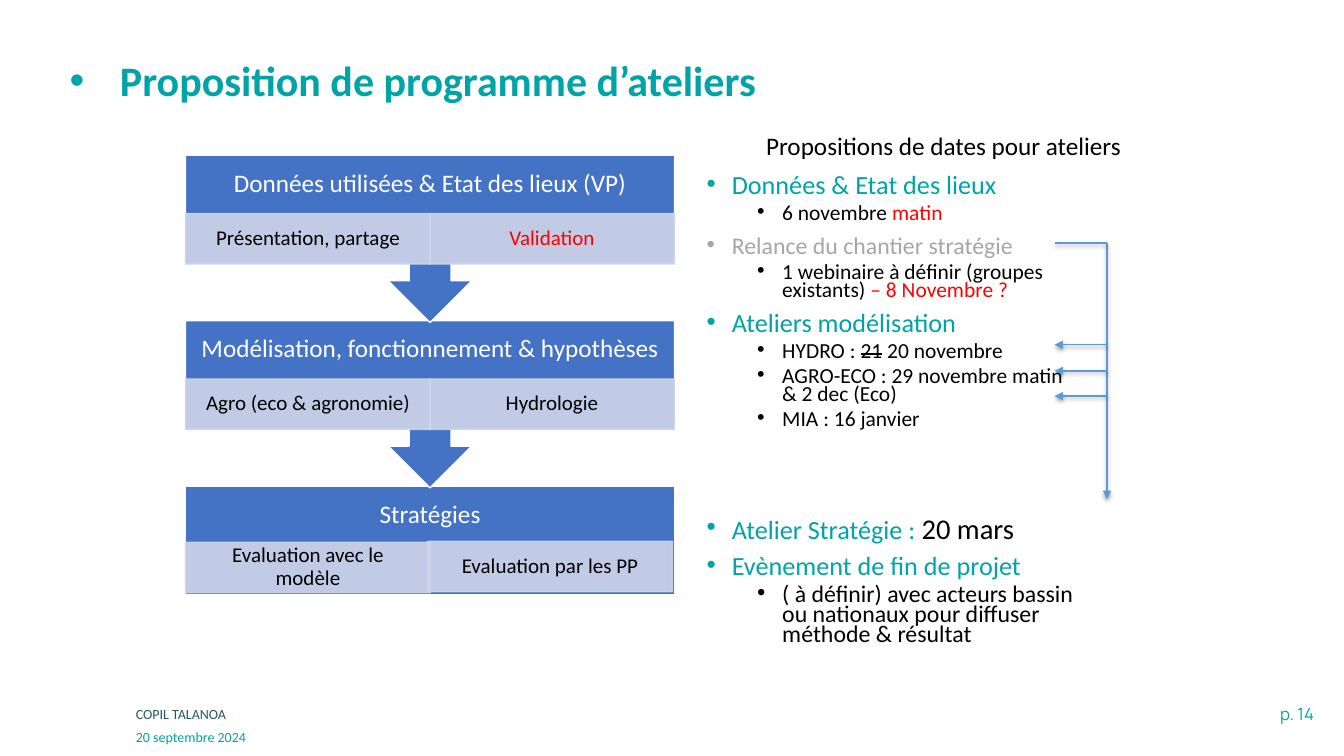
"""Builds the workshop programme slide: three stages and their proposed dates."""
from lxml import etree
from pptx import Presentation
from pptx.dml.color import RGBColor
from pptx.enum.shapes import MSO_CONNECTOR, MSO_SHAPE
from pptx.enum.text import MSO_ANCHOR, PP_ALIGN
from pptx.oxml.ns import qn
from pptx.util import Inches, Pt

LEFT, CENTER, RIGHT = PP_ALIGN.LEFT, PP_ALIGN.CENTER, PP_ALIGN.RIGHT
TOP, MIDDLE = MSO_ANCHOR.TOP, MSO_ANCHOR.MIDDLE
RECT, CALLOUT = MSO_SHAPE.RECTANGLE, MSO_SHAPE.UP_ARROW_CALLOUT
STRAIGHT = MSO_CONNECTOR.STRAIGHT

TEAL, DARK_TEAL, BLACK, RED = "00A3A6", "275662", "000000", "FF0000"
GREY, WHITE, BLUE, PALE, ARROW_BLUE = "A6A6A6", "FFFFFF", "4472C4", "CFD5EA", "5B9BD5"

TITLE = "Proposition de programme d’ateliers"
DATES_HEADING = "Propositions de dates pour ateliers"
STAGES = [
    ("Données utilisées & Etat des lieux (VP)", 1.54,
     [("Présentation, partage", BLACK, 1.84, 2.12), ("Validation", RED, 4.26, 2.12)]),
    ("Modélisation, fonctionnement & hypothèses", 3.18,
     [("Agro (eco & agronomie)", BLACK, 1.84, 3.76), ("Hydrologie", BLACK, 4.26, 3.76)]),
    ("Stratégies", 4.82,
     [("Evaluation avec le modèle", BLACK, 1.84, 5.38),
      ("Evaluation par les PP", BLACK, 4.24, 5.37)]),
]
TOPIC, DETAIL = 0, 1
AGENDA = [
    (TOPIC, 0, [("Données & Etat des lieux", 18.7, TEAL)]),
    (DETAIL, 5, [("6 novembre ", 15.3, BLACK), ("matin", 15.3, RED)]),
    (TOPIC, 10, [("Relance du chantier stratégie", 17, GREY)]),
    (DETAIL, 5, [("1 webinaire à définir (groupes existants) ", 15.3, BLACK),
                 ("– 8 Novembre ?", 15.3, RED)]),
    (TOPIC, 10, [("Ateliers modélisation", 18.7, TEAL)]),
    (DETAIL, 5, [("HYDRO : ", 15.3, BLACK), ("21", 15.3, BLACK, True),
                 (" 20 novembre", 15.3, BLACK)]),
    (DETAIL, 5, [("AGRO-ECO : 29 novembre matin & 2 dec (Eco)", 15.3, BLACK)]),
    (DETAIL, 5, [("MIA : 16 janvier", 15.3, BLACK)]),
    (TOPIC, 64, [("Atelier Stratégie : ", 18.7, TEAL), ("20 mars", 20.4, BLACK)]),
    (TOPIC, 10, [("Evènement de fin de projet", 18.7, TEAL)]),
    (DETAIL, 5, [("( à définir) avec acteurs bassin ou nationaux pour diffuser "
                  "méthode & résultat", 17, BLACK)]),
]
STAGE_LEFT, STAGE_WIDTH, STAGE_HEIGHT, LAST_HEIGHT = 1.84, 4.85, 1.66, 1.08
HEADER_HEIGHT, STEP_WIDTH, STEP_HEIGHT = 0.58, 2.43, 0.5
TRUNK_X, BRANCH_X, TRUNK_TOP, TRUNK_END = 10.98, 10.46, 2.41, 4.95
BRANCH_YS = (3.42, 3.68, 3.93)


def rgb(value):
    return RGBColor.from_string(value)


def child(parent, tag, **attributes):
    element = etree.SubElement(parent, qn(tag))
    for key, value in attributes.items():
        element.set(key, str(value))
    return element


def add_bullet(paragraph, indent, hanging):
    properties = paragraph._p.get_or_add_pPr()
    properties.set("marL", str(Inches(indent)))
    properties.set("indent", str(-Inches(hanging)))
    child(properties, "a:buFont", typeface="Arial")
    child(properties, "a:buChar", char="•")


def add_run(paragraph, text, size=18, color=BLACK, struck=False, bold=False, font="Calibri"):
    run = paragraph.add_run()
    run.text = text
    run.font.size, run.font.bold, run.font.name = Pt(size), bold, font
    run.font.color.rgb = rgb(color)
    if struck:
        run.font._element.set("strike", "sngStrike")


def set_frame(frame, anchor=TOP, insets=(0.1, 0.05, 0.1, 0.05)):
    frame.word_wrap = True
    frame.vertical_anchor = anchor
    (frame.margin_left, frame.margin_top,
     frame.margin_right, frame.margin_bottom) = map(Inches, insets)


def write(frame, text, align=LEFT, spacing=1.0, anchor=TOP,
          insets=(0.1, 0.05, 0.1, 0.05), bullet=None, **run_format):
    set_frame(frame, anchor, insets)
    paragraph = frame.paragraphs[0]
    paragraph.alignment, paragraph.line_spacing = align, spacing
    if bullet:
        add_bullet(paragraph, *bullet)
    add_run(paragraph, text, **run_format)


def add_box(slide, *place):
    return slide.shapes.add_textbox(*map(Inches, place)).text_frame


def add_block(slide, kind, place, fill, line, opacity=100):
    block = slide.shapes.add_shape(kind, *map(Inches, place))
    block.shadow.inherit = False
    block.fill.solid()
    block.fill.fore_color.rgb = rgb(fill)
    block.line.color.rgb = rgb(line)
    block.line.width = Pt(1)
    if opacity < 100:
        for color in block._element.spPr.iter(qn("a:srgbClr")):
            child(color, "a:alpha", val=opacity * 1000)
    return block


def add_stage(slide, heading, top, steps, is_last):
    height = LAST_HEIGHT if is_last else STAGE_HEIGHT
    block = add_block(slide, RECT if is_last else CALLOUT,
                      (STAGE_LEFT, top, STAGE_WIDTH, height), BLUE, WHITE)
    block.rotation = 0 if is_last else 180
    write(add_box(slide, STAGE_LEFT, top, STAGE_WIDTH, HEADER_HEIGHT), heading,
          align=CENTER, spacing=0.9, anchor=MIDDLE, insets=(0.14,) * 4, color=WHITE)
    for label, color, left, step_top in steps:
        step = add_block(slide, RECT, (left, step_top, STEP_WIDTH, STEP_HEIGHT),
                         PALE, PALE, opacity=90)
        write(step.text_frame, label, align=CENTER, spacing=0.9, anchor=MIDDLE,
              insets=(0.12, 0.02, 0.12, 0.02), size=15, color=color)


def add_agenda(slide):
    frame = add_box(slide, 6.91, 1.71, 3.88, 4.77)
    set_frame(frame)
    for index, (level, space, runs) in enumerate(AGENDA):
        paragraph = frame.add_paragraph() if index else frame.paragraphs[0]
        paragraph.level = level
        paragraph.line_spacing, paragraph.space_before = 0.7, Pt(space)
        add_bullet(paragraph, 0.75 if level else 0.25, 0.25)
        for run in runs:
            add_run(paragraph, *run)


def add_link(slide, start, end, arrow=True):
    link = slide.shapes.add_connector(STRAIGHT, *map(Inches, start + end))
    link.line.color.rgb = rgb(ARROW_BLUE)
    link.line.width = Pt(1)
    if arrow:
        child(link.line._get_or_add_ln(), "a:tailEnd", type="triangle")
    effects = child(link._element.spPr, "a:effectLst")
    shadow = child(effects, "a:outerShdw", blurRad=Pt(3.1), dist=Pt(1.6),
                   dir=5400000, rotWithShape=0)
    child(child(shadow, "a:srgbClr", val=BLACK), "a:alpha", val=38000)


def main():
    deck = Presentation()
    deck.slide_width, deck.slide_height = Inches(13.33), Inches(7.5)
    slide = deck.slides.add_slide(deck.slide_layouts[6])
    write(add_box(slide, 10.85, 6.93, 2.28, 0.3), "p. 14", align=RIGHT,
          size=12, color=TEAL, font="Manrope")
    write(add_box(slide, 1.25, 6.95, 7.34, 0.28), "COPIL TALANOA", size=10, color=DARK_TEAL)
    write(add_box(slide, 1.25, 7.18, 7.34, 0.28), "20 septembre 2024", size=10, color=TEAL)
    write(add_box(slide, 0.69, 0.4, 8.62, 0.84), TITLE, spacing=0.9, anchor=MIDDLE,
          insets=(0, 0.05, 0.1, 0.05), bullet=(0.5, 0.5), size=30, color=TEAL, bold=True)
    add_agenda(slide)
    for stage in reversed(STAGES):
        add_stage(slide, *stage, is_last=stage is STAGES[-1])
    write(add_box(slide, 7.5, 1.24, 4.21, 0.4), DATES_HEADING)
    add_link(slide, (TRUNK_X, TRUNK_TOP), (TRUNK_X, TRUNK_END))
    for y in BRANCH_YS:
        add_link(slide, (TRUNK_X, y), (BRANCH_X, y))
    add_link(slide, (BRANCH_X, TRUNK_TOP), (TRUNK_X, TRUNK_TOP), arrow=False)
    deck.save("out.pptx")


if __name__ == "__main__":
    main()
